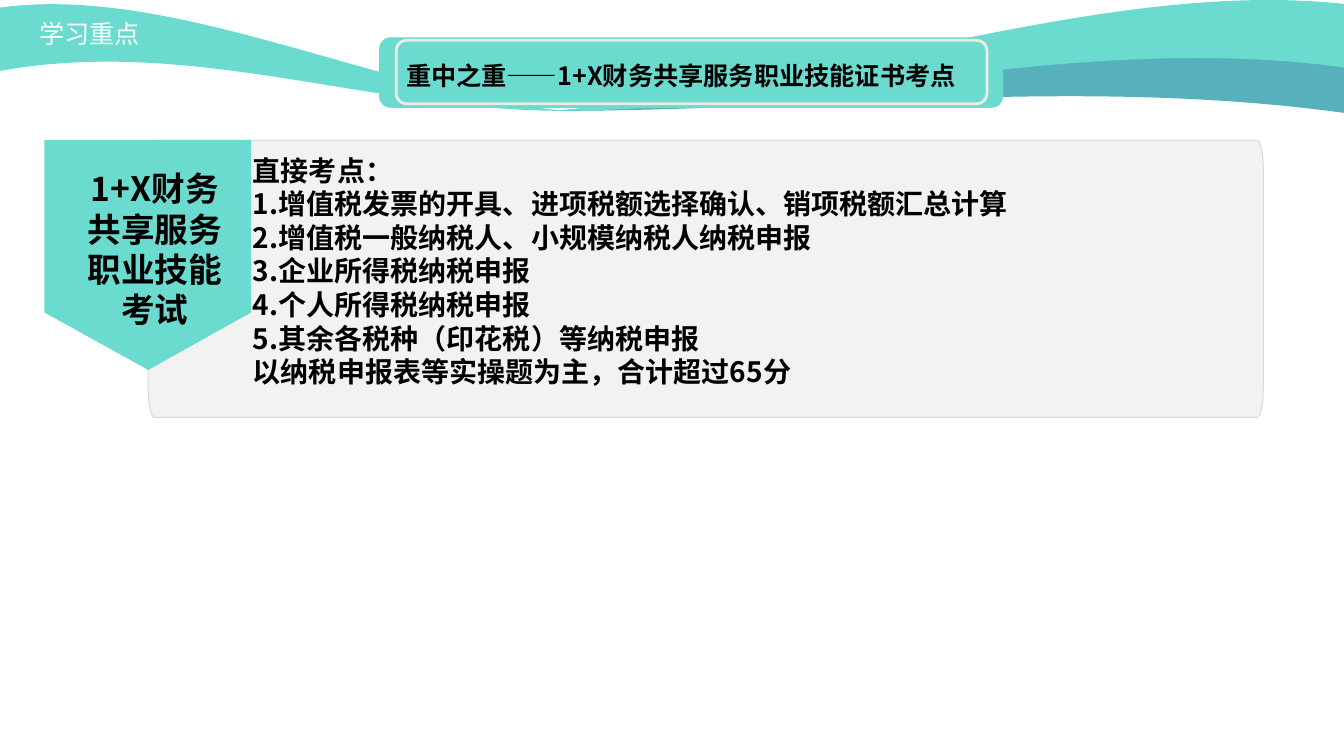
from pptx import Presentation
from pptx.dml.color import RGBColor
from pptx.enum import shapes, text
from pptx.oxml import ns
from pptx.util import Inches, Pt
from lxml import etree

COLORS = {"teal": "6BDBCF", "blue": "56B1BC", "panel": "F2F2F2", "edge": "D9D9D9",
          "cream": "EEECE1", "black": "000000", "white": "FFFFFF"}
CJK = "Noto Sans CJK SC"

prs = Presentation()
prs.slide_width, prs.slide_height = Inches(13.33), Inches(7.5)
slide = prs.slides.add_slide(prs.slide_layouts[6])


def add_outline(box, start, segments):
    """Closed outline; a segment is one point (line) or three (cubic curve)."""
    left, top, width, height = map(Inches, box)
    builder = slide.shapes.build_freeform(Inches(start[0]), Inches(start[1]))
    builder.add_line_segments([(Inches(x), Inches(y)) for x, y in (s[-1] for s in segments)])
    s = builder.convert_to_shape()
    s.left, s.top, s.width, s.height = left, top, width, height
    outline = s._element.find(".//" + ns.qn("a:path"))
    outline.set("w", str(width))
    outline.set("h", str(height))
    for child in list(outline):
        outline.remove(child)
    for i, seg in enumerate([(start,), *segments]):
        tag = "a:moveTo" if i == 0 else "a:lnTo" if len(seg) == 1 else "a:cubicBezTo"
        step = etree.SubElement(outline, ns.qn(tag))
        for x, y in seg:
            etree.SubElement(step, ns.qn("a:pt"), x=str(Inches(x) - left),
                             y=str(Inches(y) - top))
    etree.SubElement(outline, ns.qn("a:close"))
    return s


def paint(s, fill, line=None, width=0):
    s.shadow.inherit = False
    s.fill.solid()
    s.fill.fore_color.rgb = RGBColor.from_string(COLORS[fill])
    if line:
        s.line.color.rgb = RGBColor.from_string(COLORS[line])
        s.line.width = Pt(width)
    else:
        s.line.fill.background()


# Header waves
waves = [
    ("blue", (5.49, 0.43, 7.84, 0.69), (5.49, 1.1),
     [((8.12, 0.89), (10.97, 0.23), (13.33, 0.49)), ((13.33, 1.12),),
      ((10.7, 0.76), (8.12, 1.1), (5.49, 1.1))]),
    ("teal", (5.48, 0, 7.85, 1.1), (5.48, 1.1),
     [((8.11, 0.89), (10.97, -0.22), (13.33, 0.04)), ((13.33, 0.67),),
      ((10.7, 0.31), (8.11, 1.1), (5.48, 1.1))]),
    ("teal", (-0.03, 0.04, 5.63, 1.06), (5.59, 1.1),
     [((3.69, 0.89), (1.68, -0.17), (-0.03, 0.08)), ((-0.03, 0.71),),
      ((1.87, 0.35), (3.69, 1.1), (5.59, 1.1))]),
]
for color, box, start, segments in waves:
    paint(add_outline(box, start, segments), color)

# Content panel and its pennant
panel = add_outline((1.47, 1.39, 11.06, 2.75), (1.53, 1.39), [
    ((12.47, 1.39),), ((12.5, 1.39), (12.53, 1.53), (12.53, 1.69)),
    ((12.53, 3.84),), ((12.53, 4.01), (12.5, 4.14), (12.47, 4.14)),
    ((1.53, 4.14),), ((1.5, 4.14), (1.47, 4.01), (1.47, 3.84)),
    ((1.47, 1.69),), ((1.47, 1.53), (1.5, 1.39), (1.53, 1.39))])
paint(panel, "panel", "edge")
pennant = add_outline((0.44, 1.39, 2.05, 2.28), (2.49, 1.39), [
    ((2.49, 3.1),), ((1.47, 3.67),), ((0.44, 3.1),), ((0.44, 1.39),), ((2.49, 1.39),)])
paint(pennant, "teal")

# Title plate
for box, line, width in [((3.76, 0.37, 6.19, 0.7), None, 0),
                         ((3.93, 0.4, 5.86, 0.63), "cream", 2)]:
    s = slide.shapes.add_shape(shapes.MSO_SHAPE.ROUNDED_RECTANGLE, *map(Inches, box))
    paint(s, "teal", line, width)

# Texts: each paragraph is a list of (words, font) runs
exam_points = ["直接考点：",
               "1.增值税发票的开具、进项税额选择确认、销项税额汇总计算",
               "2.增值税一般纳税人、小规模纳税人纳税申报",
               "3.企业所得税纳税申报",
               "4.个人所得税纳税申报",
               "5.其余各税种（印花税）等纳税申报",
               "以纳税申报表等实操题为主，合计超过65分"]
title = [("重中之重", "Arial"), ("——1+X财务共享服务职业技能证书", CJK), ("考点", "Arial")]
LEFT, CENTER = text.PP_ALIGN.LEFT, text.PP_ALIGN.CENTER
texts = [
    ((0.29, 0.13, 1.89, 0.4), [[("学习重点", CJK)]], 18, "white", False, LEFT, True),
    ((2.41, 1.47, 9.69, 2.46), [[(point, CJK)] for point in exam_points],
     20, "black", True, LEFT, True),
    ((0.68, 1.62, 1.71, 1.72), [[("1+X财务共享服务职业技能考试", CJK)]],
     24, "black", True, CENTER, True),
    ((3.93, 0.55, 5.78, 0.4), [title], 18, "black", True, LEFT, False),
]
for box, paragraphs, size, color, bold, align, wrap in texts:
    tf = slide.shapes.add_textbox(*map(Inches, box)).text_frame
    tf.word_wrap = wrap
    for i, runs in enumerate(paragraphs):
        p = tf.add_paragraph() if i else tf.paragraphs[0]
        p.alignment = align
        p.line_spacing = Pt(size * 1.2)
        for words, font in runs:
            r = p.add_run()
            r.text = words
            r.font.color.rgb = RGBColor.from_string(COLORS[color])
            for name, value in {"size": Pt(size), "bold": bold, "name": font}.items():
                setattr(r.font, name, value)
            etree.SubElement(r._r.get_or_add_rPr(), ns.qn("a:ea"), typeface=CJK)

prs.save("out.pptx")
